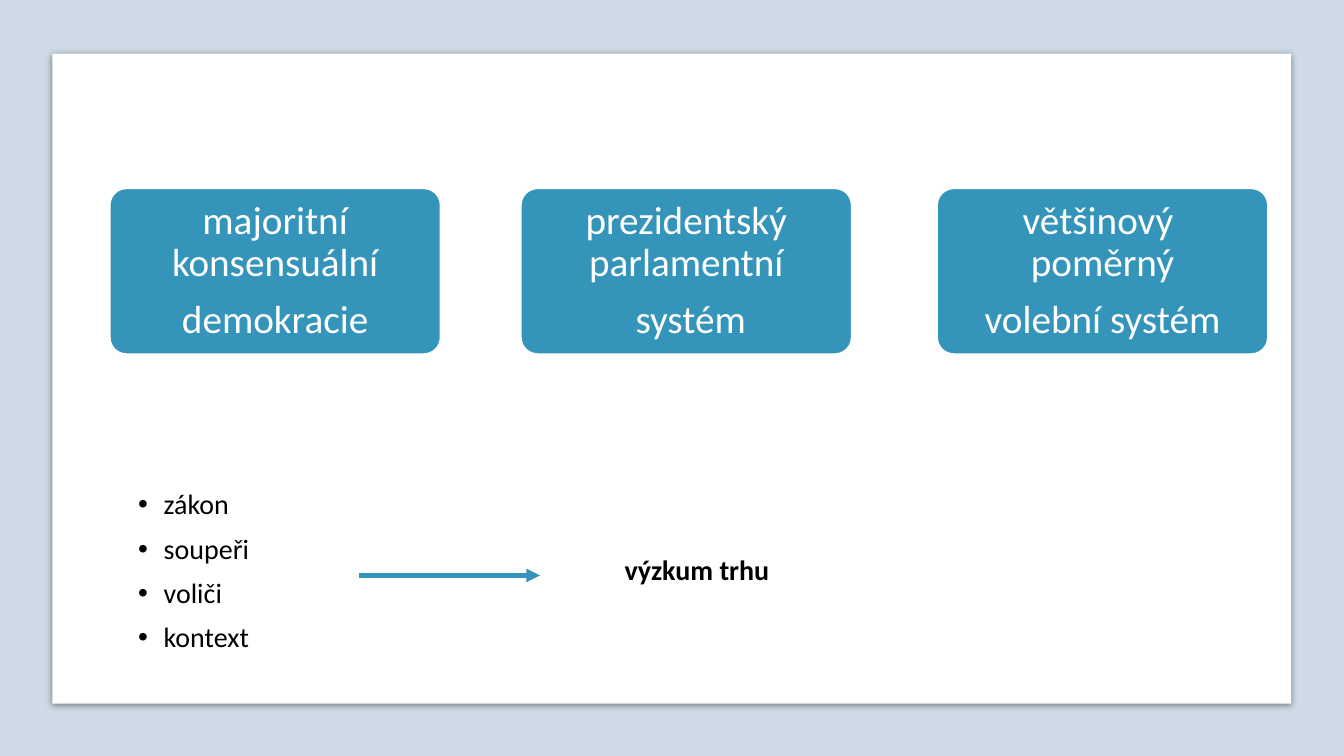
from lxml import etree
from pptx import Presentation
from pptx.dml.color import RGBColor
from pptx.enum.shapes import MSO_CONNECTOR, MSO_SHAPE
from pptx.enum.text import MSO_ANCHOR, MSO_AUTO_SIZE, PP_ALIGN
from pptx.oxml.ns import qn
from pptx.util import Cm, Pt

COLORS = {"frame": "CEDBE6", "panel": "FFFFFF", "accent": "3494BA",
          "light": "FFFFFF", "dark": "000000", "shadow": "000000"}
CARDS = [
    (2.77, ["majoritní\vkonsensuální", "demokracie"]),
    (13.13, ["prezidentský\vparlamentní", " systém"]),
    (23.62, ["většinový \vpoměrný", "volební systém"]),
]
FACTORS = ["zákon", "soupeři", "voliči", "kontext"]
RESULT = "výzkum trhu"
CARD_TOP, CARD_W, CARD_H = 4.75, 8.33, 4.17
TEXT_W, TEXT_H = 13.69, 5.92
ARROW_Y = 14.5


def rgb(name):
    return RGBColor.from_string(COLORS[name])


def write(tf, lines, size=20, color="dark", bold=False, align=PP_ALIGN.LEFT,
          anchor=MSO_ANCHOR.TOP, indent=0):
    tf.word_wrap = True
    tf.auto_size = MSO_AUTO_SIZE.NONE
    tf.vertical_anchor = anchor
    for i, line in enumerate(lines):
        p = tf.paragraphs[0] if i == 0 else tf.add_paragraph()
        p.text = line
        p.alignment = align
        p.line_spacing = 0.9
        p.space_before = Pt(10 if i else 0)
        if indent:
            pPr = p._p.get_or_add_pPr()
            pPr.set("marL", str(Cm(indent)))
            pPr.set("indent", str(-Cm(indent)))
        for r in p.runs:
            r.font.name = "Calibri"
            r.font.size = Pt(size)
            r.font.bold = bold
            r.font.color.rgb = rgb(color)


def add_panel(s):
    """White sheet with a soft shadow below it."""
    sp = s.shapes.add_shape(MSO_SHAPE.RECTANGLE, Cm(1.32), Cm(1.35), Cm(31.22), Cm(16.38))
    sp.fill.solid()
    sp.fill.fore_color.rgb = rgb("panel")
    sp.line.fill.background()
    sp.shadow.inherit = False
    effects = sp._element.spPr.find(qn("a:effectLst"))
    shadow = etree.SubElement(effects, qn("a:outerShdw"), blurRad=str(Pt(5)),
                              dist=str(Pt(1.4)), dir="5400000", rotWithShape="0")
    color = etree.SubElement(shadow, qn("a:srgbClr"), val=COLORS["shadow"])
    etree.SubElement(color, qn("a:alpha"), val="43000")


def add_card(s, left, lines):
    sp = s.shapes.add_shape(MSO_SHAPE.ROUNDED_RECTANGLE, Cm(left), Cm(CARD_TOP),
                            Cm(CARD_W), Cm(CARD_H))
    sp.adjustments[0] = 0.1
    sp.shadow.inherit = False
    sp.fill.solid()
    sp.fill.fore_color.rgb = rgb("accent")
    sp.line.color.rgb = rgb("light")
    sp.line.width = Pt(1)
    tf = sp.text_frame
    tf.margin_left = tf.margin_right = Cm(0.15)
    tf.margin_top = tf.margin_bottom = Cm(0.1)
    write(tf, lines, size=28, color="light", align=PP_ALIGN.CENTER, anchor=MSO_ANCHOR.MIDDLE)


def add_arrow(s, start, end, y):
    line = s.shapes.add_connector(MSO_CONNECTOR.STRAIGHT, Cm(start), Cm(y), Cm(end), Cm(y))
    line.line.color.rgb = rgb("accent")
    line.line.width = Pt(3.25)
    etree.SubElement(line.line._get_or_add_ln(), qn("a:tailEnd"), type="triangle")
    etree.SubElement(line._element.spPr, qn("a:effectLst"))


def main():
    prs = Presentation()
    prs.slide_width, prs.slide_height = Cm(33.87), Cm(19.05)
    s = prs.slides.add_slide(prs.slide_layouts[1])
    s.background.fill.solid()
    s.background.fill.fore_color.rgb = rgb("frame")
    title = s.shapes.title._element
    title.getparent().remove(title)

    add_panel(s)
    for left, lines in CARDS:
        add_card(s, left, lines)

    body = s.placeholders[1]
    s.shapes._spTree.append(body._element)  # in front of the panel
    body.left, body.top = Cm(3.23), Cm(12.24)
    body.width, body.height = Cm(TEXT_W), Cm(TEXT_H)
    write(body.text_frame, FACTORS, indent=0.64)

    add_arrow(s, 9.04, 13.61, ARROW_Y)
    label = s.shapes.add_textbox(Cm(15.49), Cm(13.89), Cm(TEXT_W), Cm(TEXT_H))
    write(label.text_frame, [RESULT], bold=True)
    prs.save("out.pptx")


if __name__ == "__main__":
    main()
